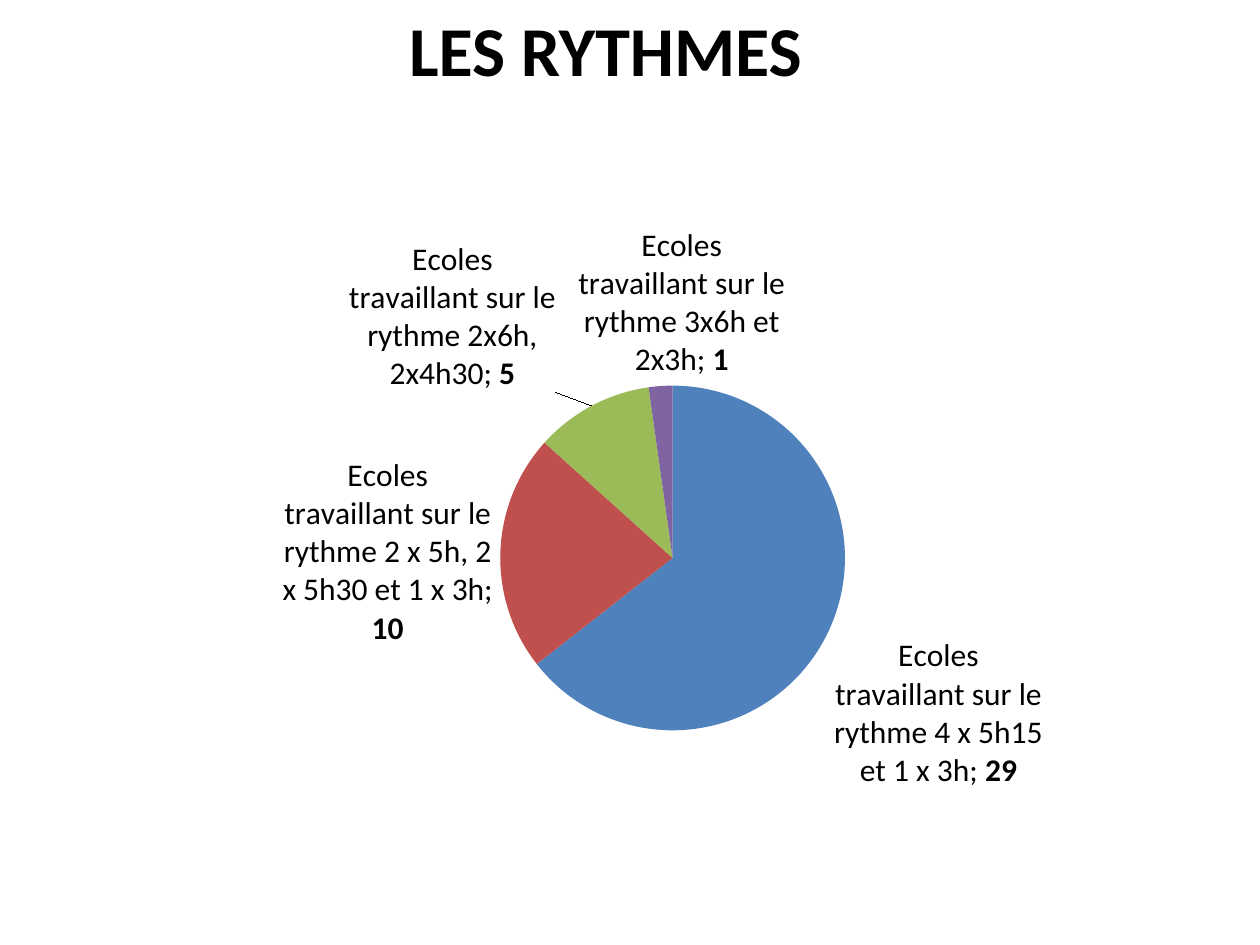
import pptx
import pptx.chart.data
import pptx.dml.color
import pptx.enum.chart
import pptx.enum.text
import pptx.oxml
import pptx.oxml.ns
import pptx.util

Pt = pptx.util.Pt
FONT = "Calibri"
COLORS = {"text": "000000", "blue": "4F81BD", "red": "C0504D",
          "green": "9BBB59", "violet": "8064A2"}
STEM = "Ecoles travaillant sur le rythme "
SLICES = [
    ("4 x 5h15 et 1 x 3h", 29, "blue", None),
    ("2 x 5h, 2 x 5h30 et 1 x 3h", 10, "red", None),
    ("2x6h, 2x4h30", 5, "green", (-0.03, -0.01)),
    ("3x6h et 2x3h", 1, "violet", (0.02, 0)),
]


def color(name):
    """Return the named colour."""
    return pptx.dml.color.RGBColor.from_string(COLORS[name])


def style(font, size, bold=False):
    """Set the face, size, weight and colour of a font."""
    font.name, font.size, font.bold = FONT, Pt(size), bold
    font.color.rgb = color("text")


def layout(**parts):
    """Build a manual chart layout from its named values."""
    body = "".join(f'<c:{key} val="{val}"/>' for key, val in parts.items())
    return pptx.oxml.parse_xml(
        f'<c:layout {pptx.oxml.ns.nsdecls("c")}>'
        f"<c:manualLayout>{body}</c:manualLayout></c:layout>")


def add_title(slide, left, top, width, height):
    """Place the centred heading."""
    frame = slide.shapes.add_textbox(left, top, width, height).text_frame
    frame.word_wrap = True
    para = frame.paragraphs[0]
    para.text = "LES RYTHMES"
    para.alignment = pptx.enum.text.PP_ALIGN.CENTER
    style(para.font, 40, True)


def add_label(point, name, value, shift):
    """Write a slice label with a bold value, moved by its shift."""
    label = point.data_label
    para = label.text_frame.paragraphs[0]
    for text, bold in ((f"{name}; ", False), (str(value), True)):
        run = para.add_run()
        run.text = text
        style(run.font, 18, bold)
    label.position = pptx.enum.chart.XL_LABEL_POSITION.OUTSIDE_END
    node = label._dLbl
    node.find(pptx.oxml.ns.qn("c:showCatName")).set("val", "1")
    if shift:
        node.insert(1, layout(x=shift[0], y=shift[1]))


def add_pie(slide, left, top, width, height):
    """Place the pie chart of school timetables."""
    data = pptx.chart.data.CategoryChartData()
    data.categories = [STEM + rhythm for rhythm, *_ in SLICES]
    data.add_series("Series 1", [value for _, value, *_ in SLICES])
    chart = slide.shapes.add_chart(pptx.enum.chart.XL_CHART_TYPE.PIE,
                                   left, top, width, height, data).chart
    chart.has_title = chart.has_legend = False
    style(chart.font, 10)
    area = chart._chartSpace.chart.plotArea
    for old in area.findall(pptx.oxml.ns.qn("c:layout")):
        area.remove(old)
    area.insert(0, layout(layoutTarget="inner", xMode="edge", yMode="edge",
                          x=0.38, y=0.26, w=0.32, h=0.5))
    plot = chart.plots[0]
    plot.vary_by_categories = True
    series = plot.series[0]
    labels = series.data_labels
    labels.show_value = labels.show_category_name = True
    labels.position = pptx.enum.chart.XL_LABEL_POSITION.OUTSIDE_END
    style(labels.font, 18)
    labels._element.find(pptx.oxml.ns.qn("c:showLeaderLines")).set("val", "1")
    for index, (rhythm, value, hue, shift) in enumerate(SLICES):
        point = series.points[index]
        point.format.fill.solid()
        point.format.fill.fore_color.rgb = color(hue)
        add_label(point, STEM + rhythm, value, shift)


def main():
    """Build and save the slide."""
    deck = pptx.Presentation()
    deck.slide_width, deck.slide_height = Pt(720), Pt(540)
    slide = deck.slides.add_slide(deck.slide_layouts[6])
    add_pie(slide, Pt(50.4), Pt(118), Pt(618.5), Pt(394))
    add_title(slide, Pt(67.7), Pt(0), Pt(556.6), Pt(55.4))
    deck.save("out.pptx")


if __name__ == "__main__":
    main()
